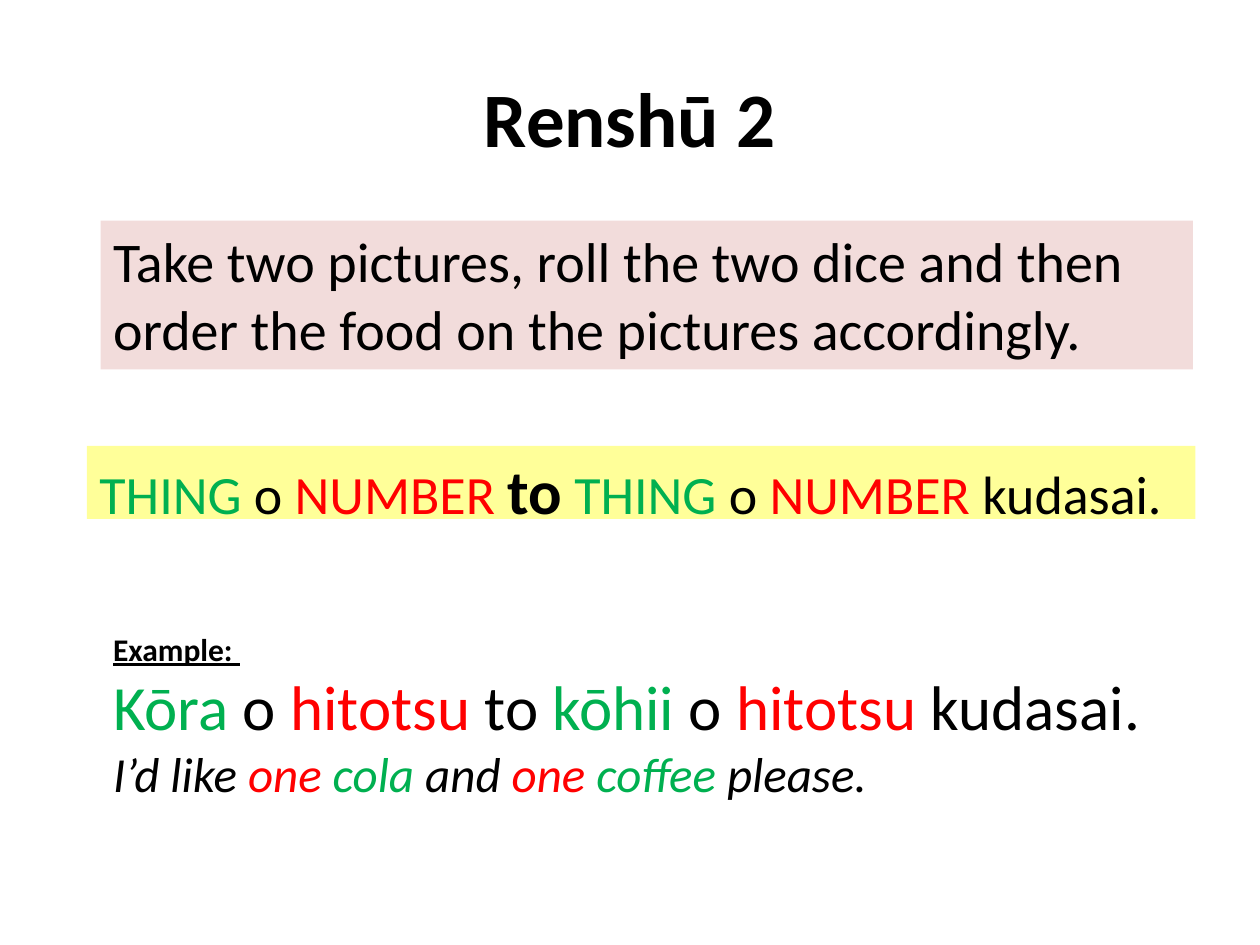
from dataclasses import dataclass

from lxml import etree
from pptx import Presentation
from pptx import util as u
from pptx.dml.color import RGBColor
from pptx.enum import text
from pptx.oxml import ns


@dataclass(frozen=True)
class Theme:
    font: str = "Calibri"
    ink: str = "000000"
    thing: str = "00B050"
    number: str = "FF0000"
    task_fill: str = "F2DCDB"
    pattern_fill: str = "FFFF99"
    title_size: float = 44
    task_size: float = 32
    pattern_size: float = 30.8
    joiner_size: float = 35.7
    label_size: float = 18
    example_size: float = 36
    meaning_size: float = 28


THEME = Theme()


def write(para, words, size, color=THEME.ink, bold=False, italic=False, underline=False):
    span = para.add_run()
    span.text = words
    font = span.font
    font.name = THEME.font
    font.size = u.Pt(size)
    font.color.rgb = RGBColor.from_string(color)
    font.bold, font.italic, font.underline = bold, italic, underline


def write_spans(para, spans, **defaults):
    for words, changes in spans:
        write(para, words, **{**defaults, **changes})


def place(box, left, top, width, height):
    box.left, box.top = u.Cm(left), u.Cm(top)
    box.width, box.height = u.Cm(width), u.Cm(height)


def paint(box, color):
    box.fill.solid()
    box.fill.fore_color.rgb = RGBColor.from_string(color)


class Slide:
    def __init__(self, deck, theme):
        self.theme = theme
        self.page = deck.slides.add_slide(deck.slide_layouts[1])

    def title(self, words, *area):
        box = self.page.shapes.title
        place(box, *area)
        box.text_frame.vertical_anchor = text.MSO_ANCHOR.MIDDLE
        para = box.text_frame.paragraphs[0]
        para.alignment = text.PP_ALIGN.CENTER
        write(para, words, self.theme.title_size, bold=True)

    def pattern(self, spans, *area):
        box = self.page.placeholders[1]
        place(box, *area)
        paint(box, self.theme.pattern_fill)
        box.text_frame.auto_size = text.MSO_AUTO_SIZE.NONE
        para = box.text_frame.paragraphs[0]
        properties = para._p.get_or_add_pPr()
        properties.set("marL", "0")
        properties.set("indent", "0")
        etree.SubElement(properties, ns.qn("a:buNone"))
        write_spans(para, spans, size=self.theme.pattern_size)

    def text_box(self, lines, *area, fill=None, wrap=True, space_before=0):
        box = self.page.shapes.add_textbox(*map(u.Cm, area))
        if fill:
            paint(box, fill)
        frame = box.text_frame
        frame.word_wrap = wrap
        frame.auto_size = text.MSO_AUTO_SIZE.SHAPE_TO_FIT_TEXT
        frame.paragraphs[0].space_before = u.Pt(space_before)
        for index, (spans, style) in enumerate(lines):
            para = frame.add_paragraph() if index else frame.paragraphs[0]
            write_spans(para, spans, **style)


def main():
    deck = Presentation()
    deck.slide_width, deck.slide_height = u.Cm(25.4), u.Cm(19.05)
    slide = Slide(deck, THEME)

    plain = {}
    thing = {"color": THEME.thing}
    number = {"color": THEME.number}
    joiner = {"size": THEME.joiner_size, "bold": True}

    slide.title("Renshū 2", 1.27, 0.76, 22.86, 3.18)

    order = [("THING", thing), (" o ", plain), ("NUMBER ", number)]
    slide.pattern(
        [*order, ("to", joiner), (" ", plain), *order, ("kudasai.", plain)],
        1.75, 8.99, 22.35, 1.47,
    )

    label = [("Example: ", plain)]
    example = [
        ("Kōra", thing), (" o ", plain), ("hitotsu ", number), ("to ", plain),
        ("kōhii ", thing), ("o ", plain), ("hitotsu ", number), ("kudasai.", plain),
    ]
    meaning = [
        ("I’d like ", plain), ("one ", number), ("cola ", thing), ("and", plain),
        (" one ", number), ("coffee", thing), (" please.", plain),
    ]
    slide.text_box(
        [
            (label, {"size": THEME.label_size, "bold": True, "underline": True}),
            (example, {"size": THEME.example_size}),
            (meaning, {"size": THEME.meaning_size, "italic": True}),
        ],
        2.03, 12.57, 21.41, 3.76, wrap=False, space_before=0.2 * THEME.label_size,
    )

    task = "Take two pictures, roll the two dice and then order the food on the pictures accordingly."
    slide.text_box(
        [([(task, plain)], {"size": THEME.task_size})],
        2.03, 4.45, 22.02, 3, fill=THEME.task_fill,
    )

    deck.save("out.pptx")


if __name__ == "__main__":
    main()
